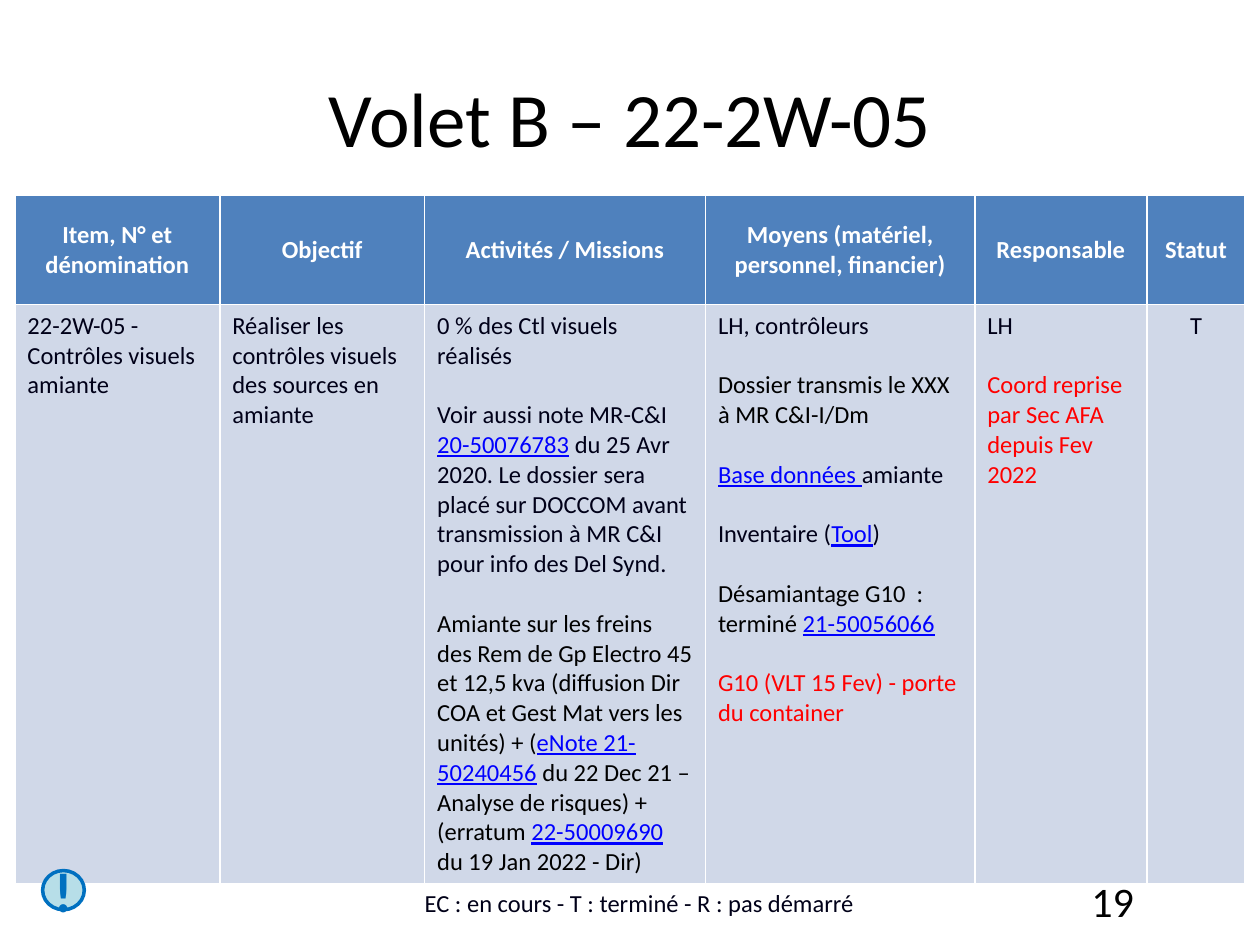
from pptx import Presentation
from pptx.dml.color import RGBColor as Rgb
from pptx.enum.shapes import MSO_SHAPE as Shape
from pptx.enum.text import MSO_ANCHOR as Anchor, PP_ALIGN as Align
from pptx.util import Cm, Pt

FONT = "Calibri"
COLORS = {
    "black": "000000", "ink": "000018", "link": "0000FF", "red": "FF0000",
    "white": "FFFFFF", "head": "4F81BD", "body": "D0D8E8",
    "sky": "B7DEE8", "blue": "0070C0",
}

TITLE = "Volet B – 22-2W-05"
LEGEND = "EC : en cours - T : terminé - R : pas démarré"
NUMBER = "19"

# Header, width in cm, and paragraphs made of (text, colour) runs
COLS = [
    ("Item, N° et dénomination", 4.13,
     [[("22-2W-05 - Contrôles visuels amiante", "ink")]]),
    ("Objectif", 4.13,
     [[("Réaliser les contrôles visuels des sources en amiante", "ink")]]),
    ("Activités / Missions", 5.66, [
        [("0 % des Ctl visuels réalisés", "ink")],
        [("Voir aussi note MR-C&I ", "ink"), ("20-50076783", "link"),
         (" du 25 Avr 2020. Le dossier sera placé sur DOCCOM avant "
          "transmission à MR C&I pour info des Del Synd.", "ink")],
        [("Amiante sur les freins des Rem de Gp Electro 45 et 12,5 kva "
          "(diffusion Dir COA et Gest Mat vers les unités) + (", "black"),
         ("eNote 21-50240456", "link"),
         (" du 22 Dec 21 – Analyse de risques) + (erratum ", "black"),
         ("22-50009690", "link"), (" du 19 Jan 2022 - Dir)", "black")],
    ]),
    ("Moyens (matériel, personnel, financier)", 5.43, [
        [("LH, contrôleurs", "ink")],
        [("Dossier transmis le XXX à MR C&I-I/Dm", "black")],
        [("Base données ", "link"), ("amiante", "ink")],
        [("Inventaire (", "ink"), ("Tool", "link"), (")", "ink")],
        [("Désamiantage G10  : terminé ", "black"), ("21-50056066", "link")],
        [("G10 (VLT 15 Fev) - porte du container", "red")],
    ]),
    ("Responsable", 3.47, [
        [("LH", "ink")],
        [("Coord reprise par Sec AFA depuis Fev 2022", "red")],
    ]),
    ("Statut", 1.98, [[("T", "ink")]]),
]
ROWS = (2.2, 11.5)
GAP = Pt(17)


def rgb(name):
    return Rgb.from_string(COLORS[name])


def place(shape, box):
    for name, val in zip(("left", "top", "width", "height"), box):
        setattr(shape, name, Cm(val))


def write(frame, paras, size=14, align=Align.LEFT, bold=False):
    """Fill a text frame; paragraphs after the first stand one line apart."""
    for i, runs in enumerate(paras):
        para = frame.add_paragraph() if i else frame.paragraphs[0]
        para.alignment = align
        if i:
            para.space_before = GAP
        for text, color in runs:
            run = para.add_run()
            run.text = text
            form = {"name": FONT, "size": Pt(size), "bold": bold,
                    "underline": color == "link"}
            for key, val in form.items():
                setattr(run.font, key, val)
            run.font.color.rgb = rgb(color)


def paint(cell, color):
    cell.fill.solid()
    cell.fill.fore_color.rgb = rgb(color)


def add_grid(slide):
    width = sum(col[1] for col in COLS)
    box = [Cm(v) for v in (0.3, 3.94, width, sum(ROWS))]
    grid = slide.shapes.add_table(len(ROWS), len(COLS), *box).table
    for row, high in zip(grid.rows, ROWS):
        row.height = Cm(high)
    for i, (head, wide, paras) in enumerate(COLS):
        grid.columns[i].width = Cm(wide)
        top, cell = grid.cell(0, i), grid.cell(1, i)
        paint(top, "head")
        paint(cell, "body")
        top.vertical_anchor = Anchor.MIDDLE
        write(top.text_frame, [[(head, "white")]], 14, Align.CENTER, True)
        last = i == len(COLS) - 1
        write(cell.text_frame, paras, align=Align.CENTER if last else Align.LEFT)


def add_label(slide, box, text, color, size, align, anchor):
    label = slide.shapes.add_textbox(*[Cm(v) for v in box])
    label.text_frame.word_wrap = True
    label.text_frame.vertical_anchor = anchor
    write(label.text_frame, [[(text, color)]], size, align)


def add_alert(slide):
    box = [Cm(v) for v in (0.86, 17.55, 0.84, 0.79)]
    alert = slide.shapes.add_shape(Shape.FLOWCHART_CONNECTOR, *box)
    alert.shadow.inherit = False
    paint(alert, "sky")
    alert.line.color.rgb = rgb("blue")
    alert.line.width = Pt(2)
    frame = alert.text_frame
    form = {"word_wrap": False, "vertical_anchor": Anchor.MIDDLE,
            "margin_left": 0, "margin_right": 0,
            "margin_top": 0, "margin_bottom": 0}
    for key, val in form.items():
        setattr(frame, key, val)
    write(frame, [[("!", "blue")]], 32, Align.CENTER, True)


def main():
    deck = Presentation()
    deck.slide_width, deck.slide_height = Cm(25.4), Cm(19.05)
    slide = deck.slides.add_slide(deck.slide_layouts[5])
    title = slide.shapes.title
    place(title, (1.27, 0.76, 22.86, 3.18))
    title.text_frame.vertical_anchor = Anchor.MIDDLE
    write(title.text_frame, [[(TITLE, "black")]], 44, Align.CENTER)
    add_grid(slide)
    add_label(slide, (18.21, 17.65, 4.9, 1.02), NUMBER, "black", 24,
              Align.RIGHT, Anchor.MIDDLE)
    add_label(slide, (5.89, 17.65, 14, 0.97), LEGEND, "ink", 14,
              Align.CENTER, Anchor.BOTTOM)
    add_alert(slide)
    deck.save("out.pptx")


if __name__ == "__main__":
    main()
